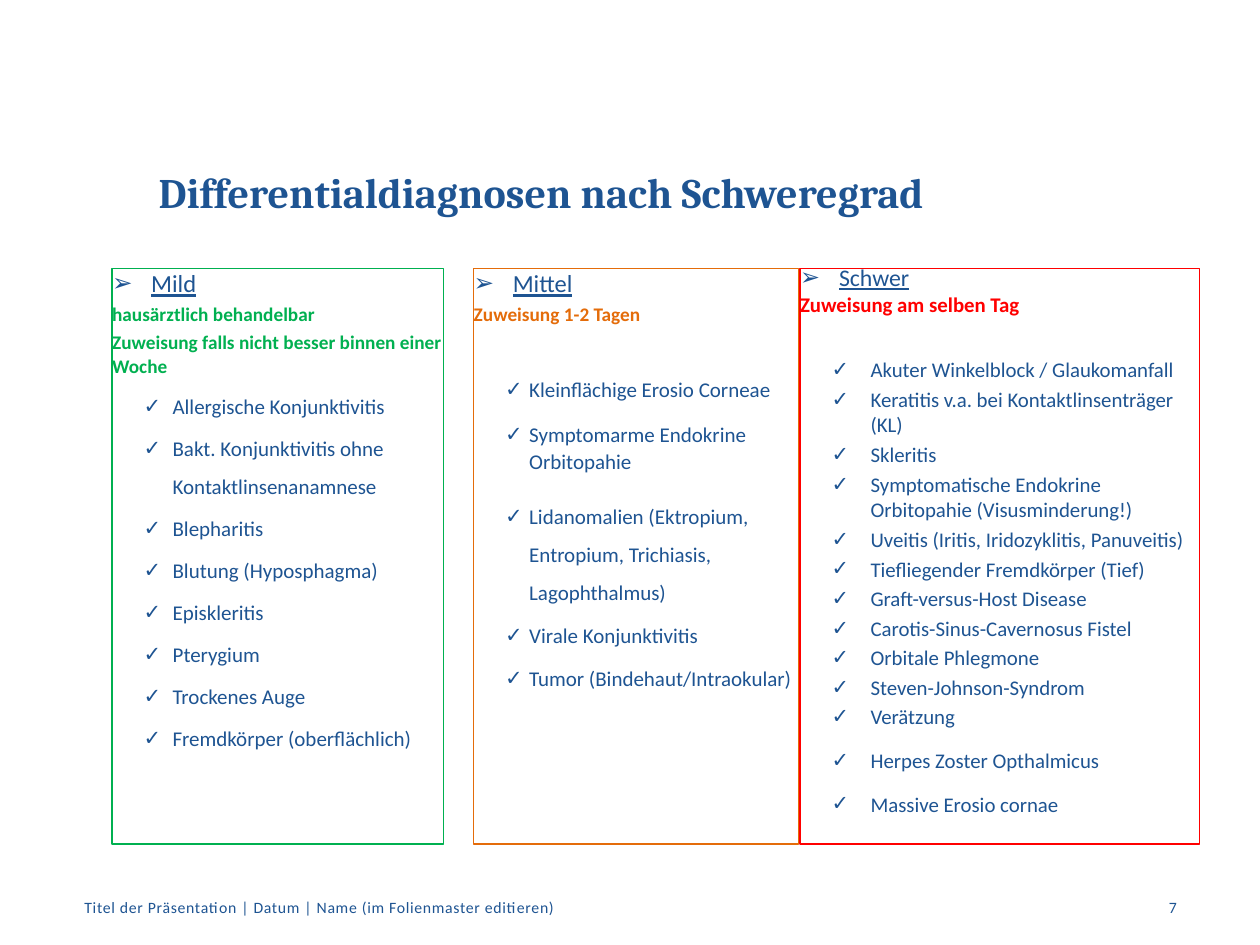
from lxml.etree import SubElement
from pptx import Presentation
from pptx.dml.color import RGBColor
from pptx.enum.shapes import MSO_SHAPE as Shape
from pptx.enum.text import MSO_ANCHOR as Anchor, PP_ALIGN as Align
from pptx.oxml.ns import qn
from pptx.util import Inches, Pt

BLUE = RGBColor(0x1E, 0x54, 0x92)
GREEN = RGBColor(0x00, 0xB0, 0x50)
ORANGE = RGBColor(0xE4, 0x6C, 0x0A)
RED = RGBColor(0xFF, 0x00, 0x00)

TOP, HEIGHT = 2.13, 4.57

# Each entry: text, line spacing, space before, space after
mild = [(text, 1.5, 2.4, 0) for text in (
    "Allergische Konjunktivitis",
    "Bakt. Konjunktivitis ohne Kontaktlinsenanamnese",
    "Blepharitis", "Blutung (Hyposphagma)", "Episkleritis", "Pterygium",
    "Trockenes Auge", "Fremdkörper (oberflächlich)")]
medium = [
    ("Kleinflächige Erosio Corneae", 1.07, 28, 8),
    ("Symptomarme Endokrine Orbitopahie", 1.07, 2.2, 8),
    ("Lidanomalien (Ektropium, Entropium, Trichiasis, Lagophthalmus)", 1.5, 2.2, 8),
    ("Virale Konjunktivitis", 1, 2.2, 8),
    ("Tumor (Bindehaut/Intraokular)", 1, 2.2, 8)]
severe = [("Akuter Winkelblock / Glaukomanfall", 1, 23.4, 0)]
severe += [(text, 1, 2.8, 0) for text in (
    "Keratitis v.a. bei Kontaktlinsenträger (KL)", "Skleritis",
    "Symptomatische Endokrine Orbitopahie (Visusminderung!)",
    "Uveitis (Iritis, Iridozyklitis, Panuveitis)")]
severe += [(text, 1, 2.6, 0) for text in (
    "Tiefliegender Fremdkörper (Tief)", "Graft-versus-Host Disease",
    "Carotis-Sinus-Cavernosus Fistel", "Orbitale Phlegmone",
    "Steven-Johnson-Syndrom")]
severe += [(text, 1, 2.6, 8) for text in (
    "Verätzung", "Herpes Zoster Opthalmicus", "Massive Erosio cornae")]

# Left, width, colour, heading, its size, notes, their size, top spacing,
# item size, item margin, item hang, items
columns = [
    (0.89, 2.63, GREEN, "Mild", 14,
     ["hausärztlich behandelbar",
      "Zuweisung falls nicht besser binnen einer Woche"],
     11, 1, 12, 0.48, 0.23, mild),
    (3.76, 2.58, ORANGE, "Mittel", 14, ["Zuweisung 1-2 Tagen"],
     11, 1, 12, 0.44, 0.19, medium),
    (6.35, 3.17, RED, "Schwer", 13.6, ["Zuweisung am selben Tag"],
     11.9, 0.8, 11.9, 0.56, 0.31, severe)]


def clear(frame, anchor=Anchor.TOP, wrap=True):
    frame.margin_left = frame.margin_right = 0
    frame.margin_top = frame.margin_bottom = 0
    frame.vertical_anchor = anchor
    frame.word_wrap = wrap


def write(para, text, size, color=BLUE, face="Calibri", bold=False,
          mark=None, margin=0, hang=0):
    para.text = text
    para.alignment = Align.LEFT
    if mark:
        props = para._p.get_or_add_pPr()
        props.set("marL", str(Inches(margin)))
        props.set("indent", str(-Inches(hang)))
        SubElement(props, qn("a:buFont")).set("typeface", "Arial")
        SubElement(props, qn("a:buChar")).set("char", mark)
    font = para.font
    font.size, font.name, font.bold = Pt(size), face, bold
    font.color.rgb = color


deck = Presentation()
deck.slide_width, deck.slide_height = Inches(10), Inches(7.5)
slide = deck.slides.add_slide(deck.slide_layouts[6])
shapes = slide.shapes

# Footer and page number
foot = shapes.add_textbox(Inches(0.67), Inches(7.1), Inches(8.07), Inches(0.2)).text_frame
clear(foot, Anchor.MIDDLE, False)
para = foot.paragraphs[0]
write(para, "Titel der Präsentation | Datum | Name (im Folienmaster editieren)", 9)
para.runs[0]._r.get_or_add_rPr().set("spc", "40")

page = shapes.add_textbox(Inches(8.74), Inches(7.11), Inches(0.6), Inches(0.18)).text_frame
clear(page, Anchor.MIDDLE)
write(page.paragraphs[0], "7", 9)
page.paragraphs[0].alignment = Align.RIGHT

# Severity columns
for (left, width, color, head, big, notes, small, tight,
     size, margin, hang, items) in columns:
    box = shapes.add_shape(Shape.RECTANGLE, Inches(left), Inches(TOP),
                           Inches(width), Inches(HEIGHT))
    box.shadow.inherit = False
    box.fill.background()
    box.line.color.rgb = color
    box.line.width = Pt(0)
    frame = box.text_frame
    clear(frame)

    para = frame.paragraphs[0]
    write(para, head, big, mark="➢", margin=0.31, hang=0.31)
    para.font.underline = True
    para.line_spacing = tight

    for note in notes:
        para = frame.add_paragraph()
        write(para, note, small, color, bold=True)
        para.line_spacing = tight
        para.space_before = Pt(2.8)

    for text, lines, before, after in items:
        para = frame.add_paragraph()
        write(para, text, size, mark="✓", margin=margin, hang=hang)
        para.line_spacing = lines
        para.space_before, para.space_after = Pt(before), Pt(after)

# Title
title = shapes.add_textbox(Inches(1.26), Inches(1.39), Inches(7.48), Inches(0.34)).text_frame
clear(title)
para = title.paragraphs[0]
write(para, "Differentialdiagnosen nach Schweregrad", 24, face="Cambria", bold=True)
para.line_spacing = Pt(24)

deck.save("out.pptx")
